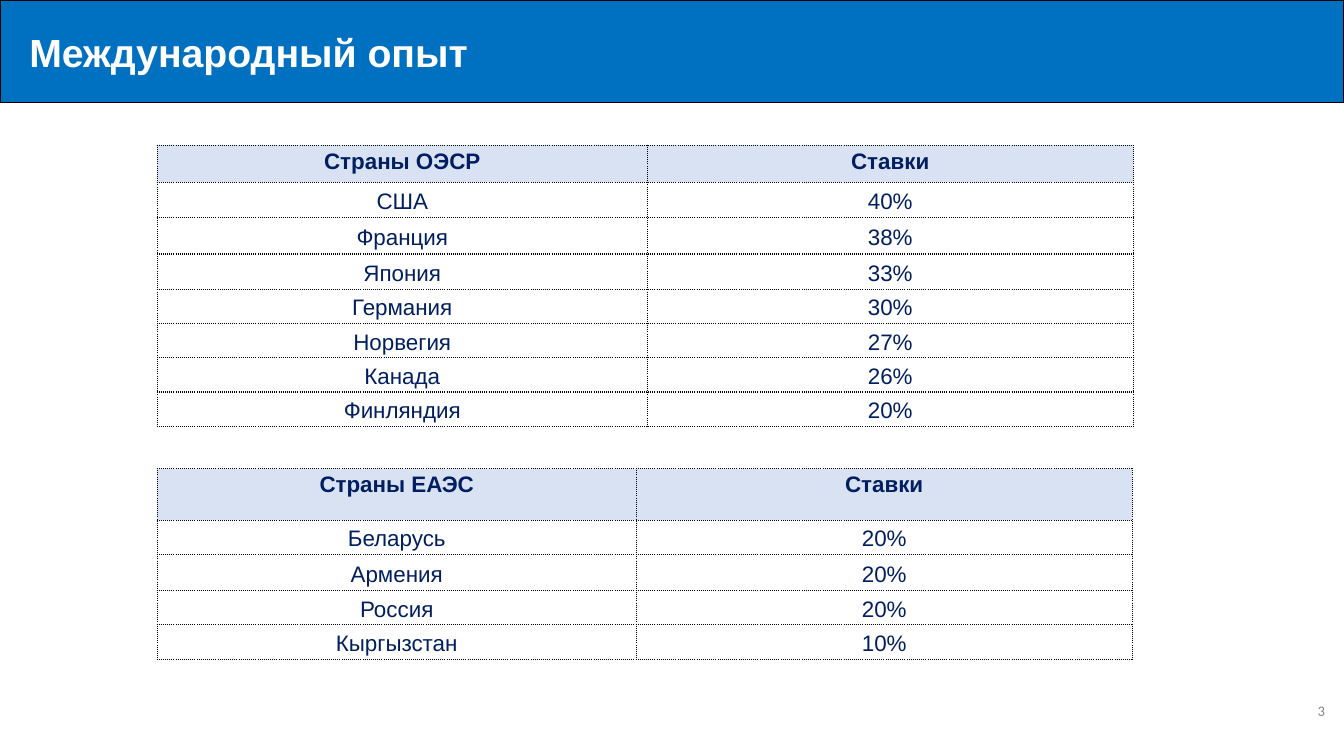
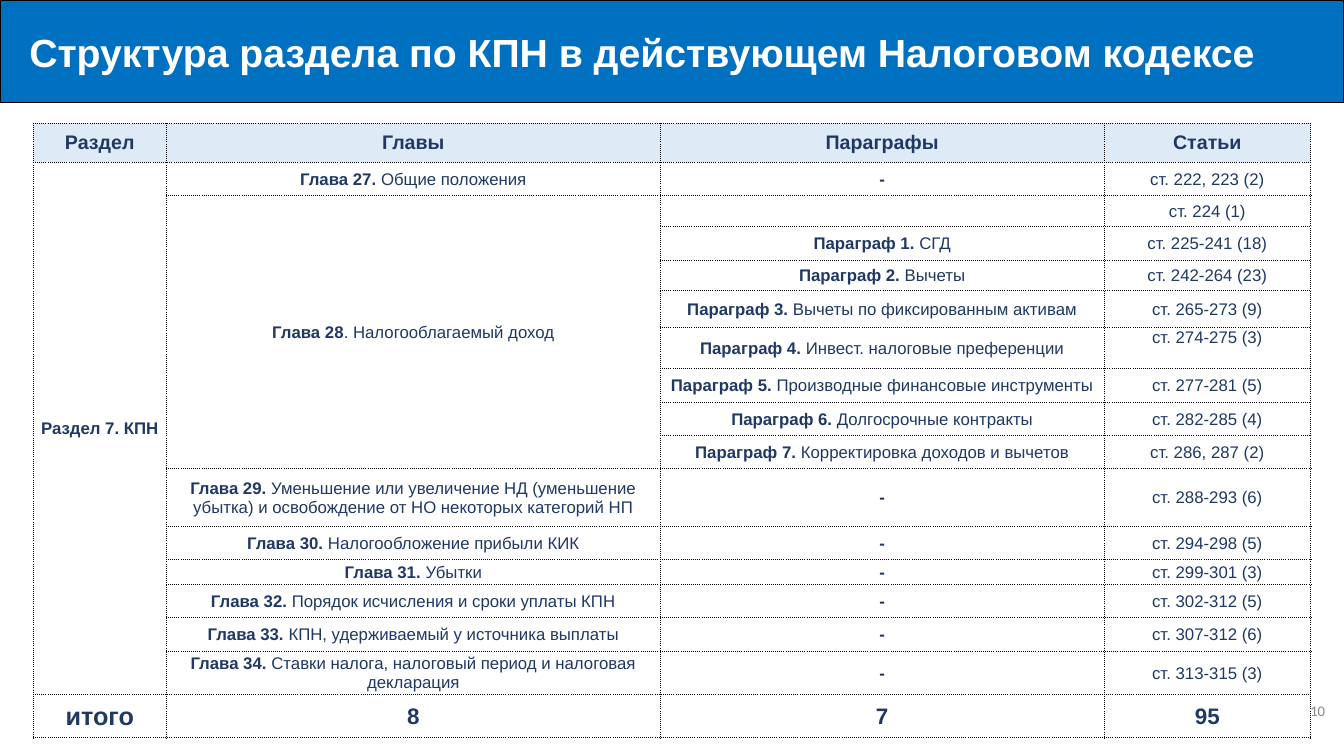
"""Build two slides on corporate income tax: foreign rates and the code's structure."""
from lxml.etree import SubElement
from pptx import Presentation
from pptx.dml.color import RGBColor
from pptx.enum.text import MSO_ANCHOR, MSO_AUTO_SIZE, PP_ALIGN
from pptx.oxml.ns import qn
from pptx.util import Inches, Pt

COLORS = {
    "band": "0070C0", "line": "000000", "white": "FFFFFF", "number": "888888",
    "rates_text": "011F60", "rates_head": "D8E2F3",
    "code_text": "1F3864", "code_head": "DEEBF7",
}

RATES_TITLE = "Международный опыт"
RATES_TABLES = [
    {
        "top": 1.44, "widths": [4.86, 4.82],
        "heights": [0.37, 0.35, 0.36, 0.35, 0.34, 0.34, 0.34, 0.34],
        "rows": [
            ("Страны ОЭСР", "Ставки"),
            ("США", "40%"),
            ("Франция", "38%"),
            ("Япония", "33%"),
            ("Германия", "30%"),
            ("Норвегия", "27%"),
            ("Канада", "26%"),
            ("Финляндия", "20%"),
        ],
    },
    {
        "top": 4.65, "widths": [4.75, 4.92],
        "heights": [0.51, 0.34, 0.36, 0.34, 0.34],
        "rows": [
            ("Страны ЕАЭС", "Ставки"),
            ("Беларусь", "20%"),
            ("Армения", "20%"),
            ("Россия", "20%"),
            ("Кыргызстан", "10%"),
        ],
    },
]

CODE_TITLE = "Структура раздела по КПН в действующем Налоговом кодексе"
CODE_HEAD = ("Раздел", "Главы", "Параграфы", "Статьи")
CODE_SECTION = "Раздел 7. КПН"
CODE_TOTAL = ("итого", "8", "7", "95")
CODE_CHAPTERS = [
    ("Глава 27. ", "Общие положения", [("-", "", "ст. 222, 223 (2)")]),
    ("Глава 28", ". Налогооблагаемый доход", [
        ("", "", "ст. 224 (1)"),
        ("Параграф 1. ", "СГД", "ст. 225-241 (18)"),
        ("Параграф 2. ", "Вычеты", "ст. 242-264 (23)"),
        ("Параграф 3. ", "Вычеты по фиксированным активам", "ст. 265-273 (9)"),
        ("Параграф 4. ", "Инвест. налоговые преференции", "ст. 274-275 (3)"),
        ("Параграф 5. ", "Производные финансовые инструменты", "ст. 277-281 (5)"),
        ("Параграф 6. ", "Долгосрочные контракты", "ст. 282-285 (4)"),
        ("Параграф 7. ", "Корректировка доходов и вычетов", "ст. 286, 287 (2)"),
    ]),
    ("Глава 29. ", "Уменьшение или увеличение НД (уменьшение убытка) "
     "и освобождение от НО некоторых категорий НП", [("-", "", "ст. 288-293 (6)")]),
    ("Глава 30. ", "Налогообложение прибыли КИК", [("-", "", "ст. 294-298 (5)")]),
    ("Глава 31. ", "Убытки", [("-", "", "ст. 299-301 (3)")]),
    ("Глава 32. ", "Порядок исчисления и сроки уплаты КПН", [("-", "", "ст. 302-312 (5)")]),
    ("Глава 33. ", "КПН, удерживаемый у источника выплаты", [("-", "", "ст. 307-312 (6)")]),
    ("Глава 34. ", "Ставки налога, налоговый период и налоговая декларация",
     [("-", "", "ст. 313-315 (3)")]),
]
CODE_WIDTHS = [1.32, 4.9, 4.4, 2.05]
CODE_HEIGHTS = [0.39, 0.33, 0.31, 0.33, 0.3, 0.37, 0.41, 0.33, 0.33, 0.33,
                0.57, 0.33, 0.25, 0.33, 0.33, 0.43, 0.43]
TOP_ALIGNED_ARTICLE = "ст. 274-275 (3)"


def color(key):
    return RGBColor.from_string(COLORS[key])


def style_font(font, size, key, bold=None, face="Arial"):
    font.name, font.size, font.bold = face, Pt(size), bold
    font.color.rgb = color(key)


def add_slide(deck, heading, number):
    slide = deck.slides.add_slide(deck.slide_layouts[5])
    title = slide.shapes.title
    title.left, title.top = Inches(0), Inches(0)
    title.width, title.height = deck.slide_width, Inches(1.02)
    title.fill.solid()
    title.fill.fore_color.rgb = color("band")
    title.line.color.rgb = color("line")
    title.line.width = Pt(1)
    frame = title.text_frame
    frame.text = heading
    frame.auto_size = MSO_AUTO_SIZE.NONE
    frame.vertical_anchor = MSO_ANCHOR.MIDDLE
    frame.margin_left = Inches(0.29)
    frame.paragraphs[0].alignment = PP_ALIGN.LEFT
    style_font(frame.paragraphs[0].font, 28, "white", True)

    footer = slide.shapes.add_textbox(Inches(11.99), Inches(6.69), Inches(1.25), Inches(0.73))
    frame = footer.text_frame
    frame.word_wrap = True
    frame.vertical_anchor = MSO_ANCHOR.MIDDLE
    frame.text = number
    frame.paragraphs[0].alignment = PP_ALIGN.RIGHT
    style_font(frame.paragraphs[0].font, 10.5, "number", face="Calibri")
    return slide


def add_grid(slide, left, top, widths, heights):
    table = slide.shapes.add_table(
        len(heights), len(widths), Inches(left), Inches(top),
        Inches(sum(widths)), Inches(sum(heights))).table
    table.first_row = table.horz_banding = False
    for column, width in zip(table.columns, widths):
        column.width = Inches(width)
    for row, height in zip(table.rows, heights):
        row.height = Inches(height)
    return table


def set_borders(cell, width):
    properties = cell._tc.get_or_add_tcPr()
    for position, side in enumerate(("lnL", "lnR", "lnT", "lnB")):
        border = SubElement(properties, qn(f"a:{side}"), w=str(Pt(width)))
        fill = SubElement(border, qn("a:solidFill"))
        SubElement(fill, qn("a:srgbClr"), val=COLORS["line"])
        SubElement(border, qn("a:prstDash"), val="sysDot")
        properties.insert(position, border)


def fill_cell(cell, bold, plain, size, ink, back, margins, border,
              anchor=MSO_ANCHOR.MIDDLE, spacing=None):
    cell.fill.solid()
    cell.fill.fore_color.rgb = color(back)
    set_borders(cell, border)
    cell.margin_left, cell.margin_top, cell.margin_right, cell.margin_bottom = map(Inches, margins)
    cell.vertical_anchor = anchor
    paragraph = cell.text_frame.paragraphs[0]
    paragraph.alignment = PP_ALIGN.CENTER
    paragraph.line_spacing = spacing
    style_font(paragraph.font, size, ink, bool(bold))
    for text, weight in ((bold, True), (plain, False)):
        if text:
            run = paragraph.add_run()
            run.text = text
            if bold and plain:
                run.font.bold = weight


def add_rates(slide, top, widths, heights, rows):
    table = add_grid(slide, 1.56, top, widths, heights)
    for r, row in enumerate(rows):
        for c, text in enumerate(row):
            bold, plain = ("", text) if r else (text, "")
            fill_cell(table.cell(r, c), bold, plain, 16, "rates_text",
                      "white" if r else "rates_head", (0.07, 0, 0.07, 0), 1,
                      MSO_ANCHOR.MIDDLE if r else MSO_ANCHOR.TOP, 1.15)


def add_code_structure(slide):
    table = add_grid(slide, 0.33, 1.22, CODE_WIDTHS, CODE_HEIGHTS)
    total_row = len(CODE_HEIGHTS) - 1

    def put(r, c, bold, plain="", size=12, back="white", anchor=MSO_ANCHOR.MIDDLE):
        fill_cell(table.cell(r, c), bold, plain, size, "code_text", back,
                  (0.01, 0.01, 0.01, 0), 0.75, anchor)

    for c, (head, total) in enumerate(zip(CODE_HEAD, CODE_TOTAL)):
        put(0, c, head, size=14, back="code_head")
        put(total_row, c, total, size=16 if c else 18)

    r = 1
    for chapter, subject, parts in CODE_CHAPTERS:
        first = r
        for part, theme, articles in parts:
            put(r, 0, CODE_SECTION if r == 1 else "")
            put(r, 1, *((chapter, subject) if r == first else ("", "")))
            put(r, 2, part, theme)
            put(r, 3, "", articles, anchor=MSO_ANCHOR.TOP
                if articles == TOP_ALIGNED_ARTICLE else MSO_ANCHOR.MIDDLE)
            r += 1
        if len(parts) > 1:
            table.cell(first, 1).merge(table.cell(r - 1, 1))
    table.cell(1, 0).merge(table.cell(total_row - 1, 0))


def main():
    deck = Presentation()
    deck.slide_width, deck.slide_height = Inches(13.33), Inches(7.5)
    rates_slide = add_slide(deck, RATES_TITLE, "3")
    for rates in RATES_TABLES:
        add_rates(rates_slide, **rates)
    add_code_structure(add_slide(deck, CODE_TITLE, "10"))
    deck.save("out.pptx")


if __name__ == "__main__":
    main()
